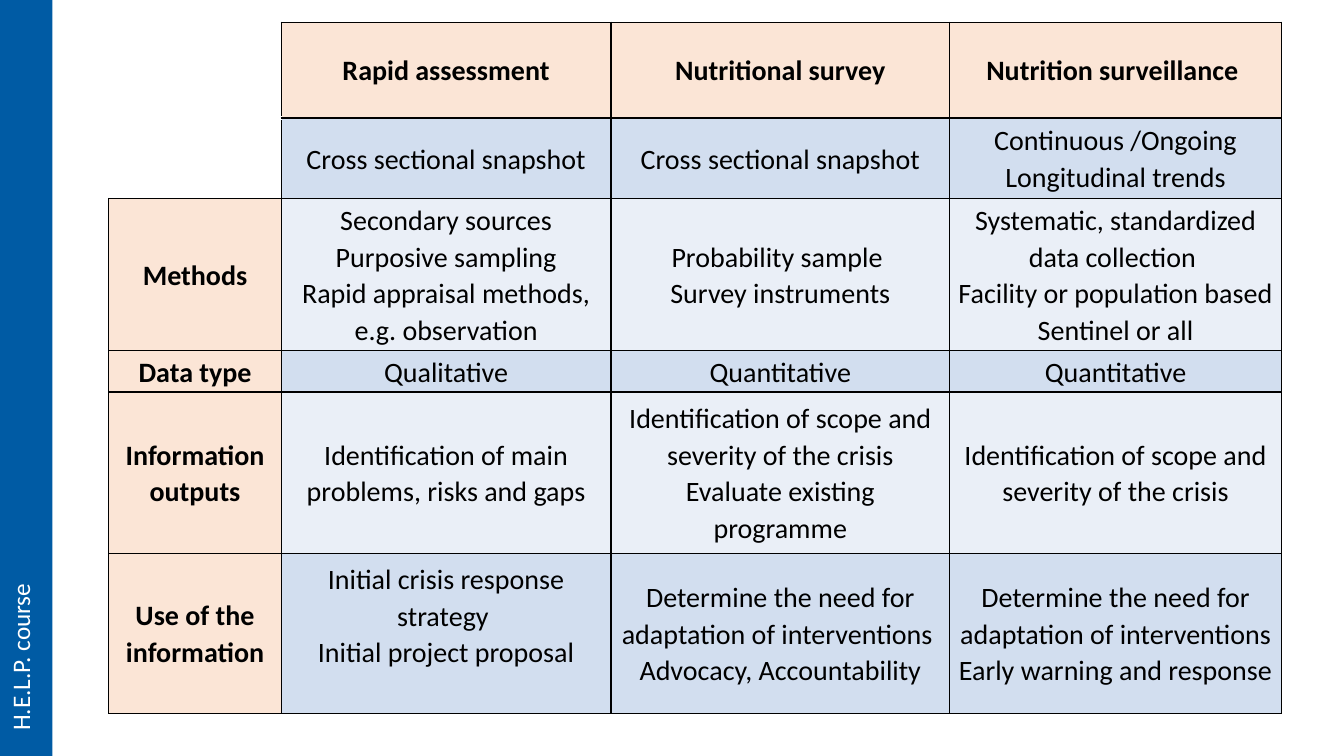
from lxml import etree
from pptx import Presentation
from pptx.dml.color import RGBColor
from pptx.enum.shapes import MSO_SHAPE
from pptx.enum.text import MSO_ANCHOR, MSO_AUTO_SIZE, PP_ALIGN
from pptx.oxml.ns import qn
from pptx.util import Inches, Pt

RECT = MSO_SHAPE.RECTANGLE
MIDDLE = MSO_ANCHOR.MIDDLE
CENTER = PP_ALIGN.CENTER
GROW = MSO_AUTO_SIZE.SHAPE_TO_FIT_TEXT

BLACK = RGBColor(0x00, 0x00, 0x00)
WHITE = RGBColor(0xFF, 0xFF, 0xFF)
BLUE = RGBColor(0x00, 0x5B, 0xA4)
PEACH = RGBColor(0xFB, 0xE5, 0xD6)
BANDS = [RGBColor(0xEA, 0xEF, 0xF7), RGBColor(0xD2, 0xDE, 0xEF)]
FONT = "Calibri"

COLS = [1.71, 3.27, 3.36, 3.29]
ROWS = [0.95, 0.8, 1.51, 0.41, 1.6, 1.59]
LINE = 0.36  # height of one text line

# Each cell is a list of paragraphs
CELLS = [
    [[], ["Rapid assessment"], ["Nutritional survey"], ["Nutrition surveillance "]],
    [[], ["Cross sectional snapshot"], ["Cross sectional snapshot"],
     ["Continuous /Ongoing", "Longitudinal trends"]],
    [["Methods"],
     ["Secondary sources", "Purposive sampling",
      "Rapid appraisal methods, e.g. observation"],
     ["Probability sample ", "Survey instruments"],
     ["Systematic, standardized data collection ",
      "Facility or population based", "Sentinel or all"]],
    [["Data type"], ["Qualitative"], ["Quantitative"], ["Quantitative"]],
    [["Information outputs"],
     ["Identification of main problems, risks and gaps"],
     ["Identification of scope and severity of the crisis",
      "Evaluate existing programme"],
     ["Identification of scope and severity of the crisis"]],
    [["Use of the information"],
     ["Initial crisis response strategy ", "Initial project proposal"],
     ["Determine the need for adaptation of interventions ",
      "Advocacy, Accountability"],
     ["Determine the need for adaptation of interventions",
      "Early warning and response"]],
]


def add_run(para, text, size, color, bold=False):
    run = para.add_run()
    run.text = text
    font = run.font
    font.name, font.size, font.bold = FONT, Pt(size), bold
    font.color.rgb = color


def set_edge(cell, side, color, width=1):
    props = cell._tc.get_or_add_tcPr()
    line = etree.SubElement(props, qn("a:ln" + side), w=str(Pt(width)))
    fill = etree.SubElement(line, qn("a:solidFill"))
    etree.SubElement(fill, qn("a:srgbClr"), val=str(color))


def fill_cell(cell, paras, color, bold):
    cell.vertical_anchor = MIDDLE
    cell.margin_left = cell.margin_right = Inches(0.07)
    cell.margin_top = cell.margin_bottom = 0
    cell.fill.solid()
    cell.fill.fore_color.rgb = color
    frame = cell.text_frame
    for i, text in enumerate(paras):
        para = frame.add_paragraph() if i else frame.paragraphs[0]
        para.alignment = CENTER
        para.line_spacing = 1.07
        add_run(para, text, 20, BLACK, bold)


def add_grid(slide, left, top):
    shape = slide.shapes.add_table(
        len(ROWS), len(COLS), Inches(left), Inches(top),
        Inches(sum(COLS)), Inches(sum(ROWS)))
    table = shape.table
    for col, width in zip(table.columns, COLS):
        col.width = Inches(width)
    for row, height in zip(table.rows, ROWS):
        row.height = Inches(height)
    for r, row in enumerate(CELLS):
        for c, paras in enumerate(row):
            cell = table.cell(r, c)
            head = r == 0 or c == 0
            # The blank corner shows only its right and lower edges
            blank = not paras
            set_edge(cell, "L", WHITE if blank else BLACK)
            set_edge(cell, "R", BLACK)
            set_edge(cell, "T", WHITE if blank else BLACK)
            if blank and r == 0:
                set_edge(cell, "B", WHITE, 3)
            else:
                set_edge(cell, "B", BLACK)
            color = WHITE if blank else PEACH if head else BANDS[r % 2]
            fill_cell(cell, paras, color, head)
    # The first use cell sits half a line higher
    table.cell(5, 1).margin_bottom = Inches(LINE)


def add_side(slide, left, top, width, height):
    # Blue band
    band = slide.shapes.add_shape(
        RECT, Inches(left), Inches(top), Inches(width), Inches(height))
    band.shadow.inherit = False
    band.fill.solid()
    band.fill.fore_color.rgb = BLUE
    band.line.fill.background()
    # Course name, reading upwards
    label = slide.shapes.add_textbox(
        Inches(left), Inches(top + height - 1.73), Inches(0.81), Inches(1.58))
    frame = label.text_frame
    frame.word_wrap = False
    frame.auto_size = GROW
    frame._txBody.bodyPr.set("vert", "vert270")
    add_run(frame.paragraphs[0], "H.E.L.P. course", 18, WHITE)


def main():
    deck = Presentation()
    deck.slide_width, deck.slide_height = Inches(13.33), Inches(7.5)
    slide = deck.slides.add_slide(deck.slide_layouts[6])
    add_grid(slide, 1.08, 0.22)
    add_side(slide, 0, 0, 0.52, 7.5)
    deck.save("out.pptx")


if __name__ == "__main__":
    main()
